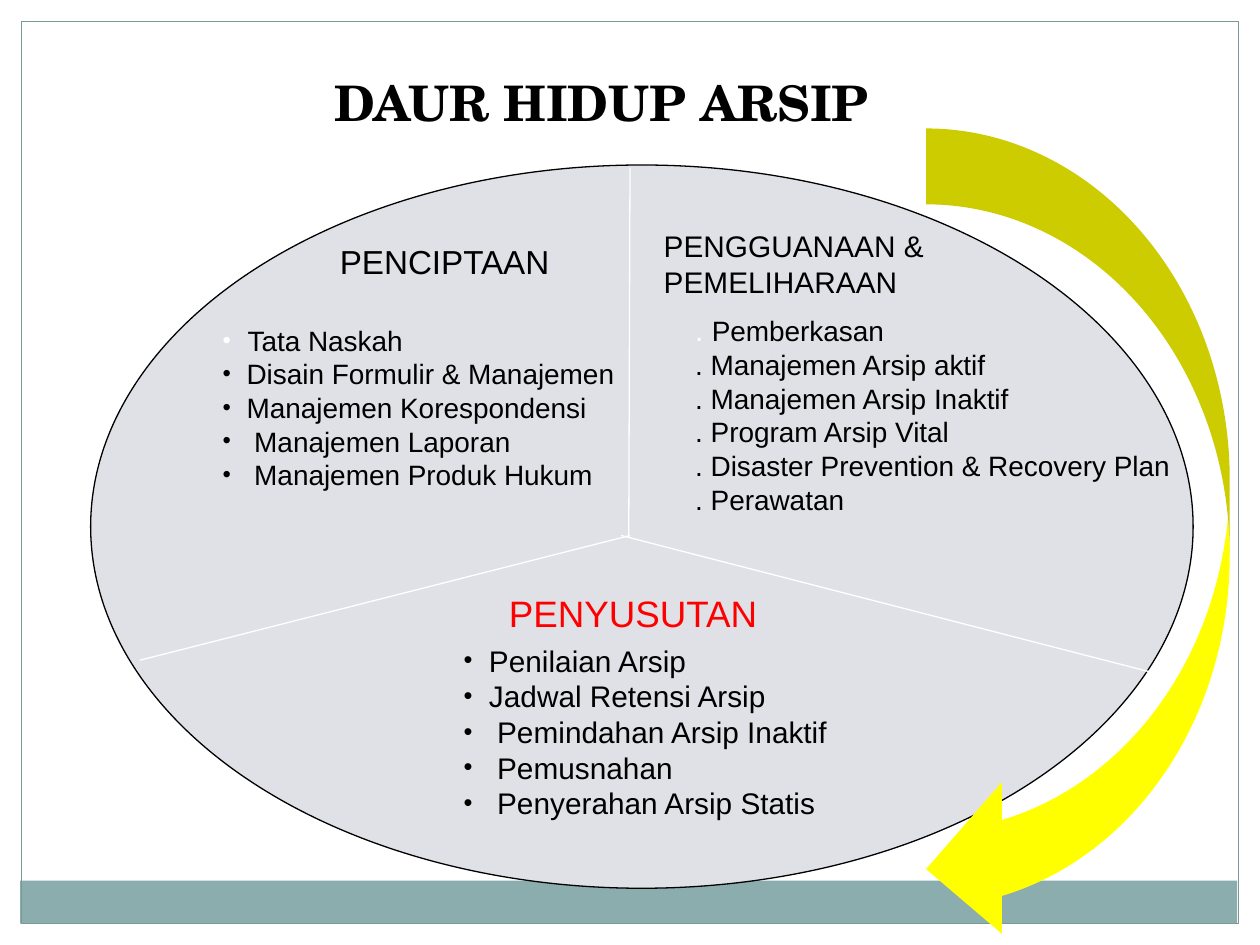
from lxml import etree
from pptx import Presentation
from pptx import util as u
from pptx.dml.color import RGBColor
from pptx.enum import shapes, text
from pptx.oxml.ns import qn

BLACK, WHITE, RED = "000000", "FFFFFF", "FF0000"
TITLE = "DAUR HIDUP ARSIP"
ELLIPSE = (51.8, 94.3, 630, 413.3)
ARROW = (529.2, 73.4, 173.5, 466.6)
DIVIDERS = [
    (360, 95.8, 359.3, 307.4),
    (360, 306, 79.9, 377.3),
    (355, 306, 656.6, 383.8),
]
HEADINGS = [
    ("PENCIPTAAN", (156.2, 134.6, 195.8, 30.2), 19, BLACK, text.PP_ALIGN.CENTER),
    ("PENGGUANAAN & PEMELIHARAAN", (372.2, 126.7, 185.8, 48.2), 17, BLACK, text.PP_ALIGN.LEFT),
    ("PENYUSUTAN", (283.7, 334, 184.3, 32), 21, RED, text.PP_ALIGN.LEFT),
]
CREATION = [("Tata Naskah", 14.2), ("Disain Formulir & Manajemen", 13.6),
            ("Manajemen Korespondensi", 13.6), ("Manajemen Laporan", 18),
            ("Manajemen Produk Hukum", 18)]
DISPOSAL = [("Penilaian Arsip", 14.5), ("Jadwal Retensi Arsip", 14.5),
            ("Pemindahan Arsip Inaktif", 19.2), ("Pemusnahan", 19.2),
            ("Penyerahan Arsip Statis", 19.2)]
USE = ["Pemberkasan", "Manajemen Arsip aktif", "Manajemen Arsip Inaktif",
       "Program Arsip Vital", "Disaster Prevention & Recovery Plan", "Perawatan"]


def rgb(value):
    return RGBColor.from_string(value)


def pts(values):
    return [u.Pt(v) for v in values]


def add_shape(s, kind, box, fill=None, line=None):
    sp = s.shapes.add_shape(kind, *pts(box))
    sp.shadow.inherit = False
    if fill:
        sp.fill.solid()
        sp.fill.fore_color.rgb = rgb(fill)
    else:
        sp.fill.background()
    if line:
        sp.line.color.rgb = rgb(line)
        sp.line.width = u.Pt(0.75)
    else:
        sp.line.fill.background()
    return sp


def add_divider(s, ends):
    cxn = s.shapes.add_connector(shapes.MSO_CONNECTOR.STRAIGHT, *pts(ends))
    cxn.line.color.rgb = rgb(WHITE)
    cxn.line.width = u.Pt(0.75)
    etree.SubElement(cxn._element.spPr, qn("a:effectLst"))


def add_text(s, box, lines, size, color=BLACK, align=text.PP_ALIGN.LEFT):
    tf = s.shapes.add_textbox(*pts(box)).text_frame
    tf.word_wrap = True
    for i, line in enumerate(lines):
        p = tf.paragraphs[0] if i == 0 else tf.add_paragraph()
        p.text = line
        p.alignment = align
        p.line_spacing = u.Pt(round(size * 1.2, 1))
        p.font.name = "Arial"
        p.font.size = u.Pt(size)
        p.font.color.rgb = rgb(color)
    return tf


def add_bullet(p, indent, color):
    pPr = p._p.get_or_add_pPr()
    pPr.set("marL", str(u.Pt(indent)))
    pPr.set("indent", str(-u.Pt(indent)))
    marks = [("buClr", {}), ("buSzPct", {"val": "85000"}),
             ("buFont", {"typeface": "Arial"}), ("buChar", {"char": "•"})]
    nodes = [etree.Element(qn("a:" + tag), attrs) for tag, attrs in marks]
    etree.SubElement(nodes[0], qn("a:srgbClr"), val=color)
    at = 1 if pPr.find(qn("a:lnSpc")) is not None else 0
    pPr[at:at] = nodes


def add_bullets(s, box, items, size, first_color=BLACK):
    tf = add_text(s, box, [item for item, _ in items], size)
    for i, (p, (_, indent)) in enumerate(zip(tf.paragraphs, items)):
        add_bullet(p, indent, BLACK if i else first_color)


def add_title(s):
    sp = s.shapes.title
    sp.left, sp.top, sp.width, sp.height = pts((61.9, 0, 563.8, 105.1))
    tf = sp.text_frame
    tf.text = TITLE
    tf.auto_size = text.MSO_AUTO_SIZE.NONE
    tf.vertical_anchor = text.MSO_ANCHOR.BOTTOM
    tf.margin_bottom = u.Pt(30)
    p = tf.paragraphs[0]
    p.alignment = text.PP_ALIGN.CENTER
    p.font.name = "TeX Gyre Schola"
    p.font.size = u.Pt(28)
    p.font.bold = True
    p.font.color.rgb = rgb(BLACK)


def main():
    """Build the archive life cycle slide."""
    prs = Presentation()
    prs.slide_width, prs.slide_height = pts((720, 540))
    s = prs.slides.add_slide(prs.slide_layouts[5])
    kind = shapes.MSO_SHAPE
    add_shape(s, kind.RECTANGLE, (11.5, 503.3, 695.5, 24.5), fill="8CADAE")
    add_shape(s, kind.RECTANGLE, (12.2, 12.2, 695.5, 515.5), line="7C999A")
    add_title(s)
    add_shape(s, kind.OVAL, ELLIPSE, "DFE1E7", BLACK)
    for ends in DIVIDERS:
        add_divider(s, ends)
    for label, box, size, color, align in HEADINGS:
        add_text(s, box, [label], size, color, align)
    add_bullets(s, (257.8, 363.6, 224.6, 109.2), DISPOSAL, 17)
    add_bullets(s, (120.2, 181.2, 270, 103.2), CREATION, 16, WHITE)
    tf = add_text(s, (390.2, 176, 292.3, 122.4), [". " + item for item in USE], 16)
    p = tf.paragraphs[0]
    p.runs[0].text = ". "
    p.runs[0].font.size = u.Pt(17)
    p.runs[0].font.color.rgb = rgb(WHITE)
    p.add_run().text = USE[0]
    arrow = add_shape(s, kind.CURVED_LEFT_ARROW, ARROW, "FFFF00")
    for i, value in enumerate((0.25, 0.5, 0.25)):
        arrow.adjustments[i] = value
    prs.save("out.pptx")


if __name__ == "__main__":
    main()
